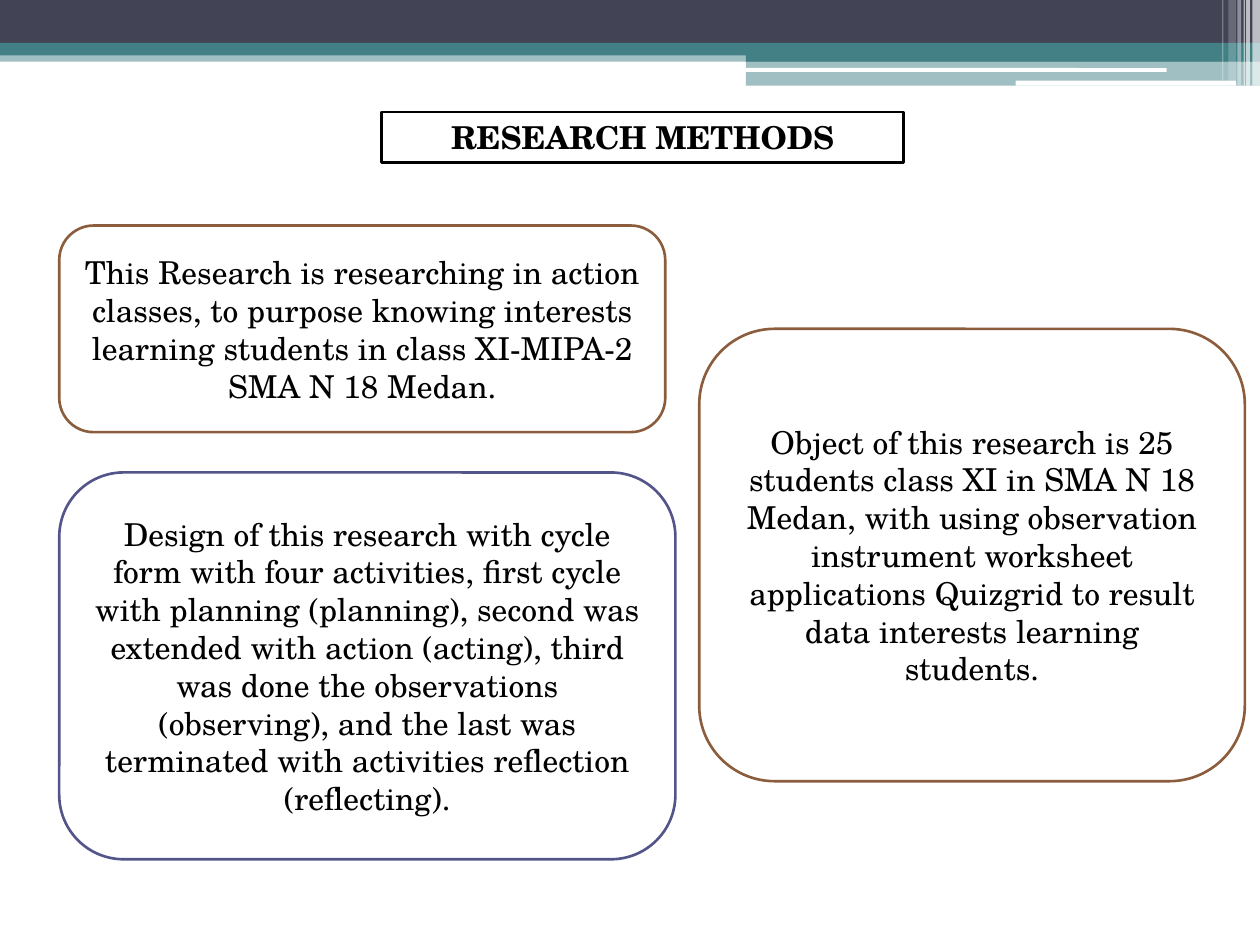
import pptx
import pptx.util
import pptx.dml.color
import pptx.enum.shapes
import pptx.enum.text
import pptx.oxml

FONT = "TeX Gyre Schola"
COLORS = {"white": "FFFFFF", "black": "000000", "navy": "424456",
          "teal": "438086", "brown": "8B5D3D", "violet": "53548A"}
RECT = pptx.enum.shapes.MSO_SHAPE.RECTANGLE
ROUND = pptx.enum.shapes.MSO_SHAPE.ROUNDED_RECTANGLE

prs = pptx.Presentation()
prs.slide_width = pptx.util.Inches(10)
prs.slide_height = pptx.util.Inches(7.5)
COL = prs.slide_width / 100
ROW = prs.slide_height / 75
s = prs.slides.add_slide(prs.slide_layouts[5])


def add_box(kind, left, top, width, height, fill, opacity=100):
    """Add a filled shape without outline, placed in grid columns and rows."""
    sp = s.shapes.add_shape(kind, int(left * COL), int(top * ROW),
                            int(width * COL), int(height * ROW))
    sp.shadow.inherit = False
    sp.line.fill.background()
    sp.fill.solid()
    sp.fill.fore_color.rgb = pptx.dml.color.RGBColor.from_string(COLORS[fill])
    if opacity < 100:
        color = sp.fill._xPr.find(".//" + pptx.oxml.ns.qn("a:srgbClr"))
        alpha = color.makeelement(pptx.oxml.ns.qn("a:alpha"), {"val": str(opacity * 1000)})
        color.append(alpha)
    return sp


def write_framed(sp, text, line, bold=False):
    """Outline a shape and give it one centred paragraph."""
    sp.line.color.rgb = pptx.dml.color.RGBColor.from_string(COLORS[line])
    sp.line.width = pptx.util.Pt(1.5)
    tf = sp.text_frame
    tf.text = text
    tf.word_wrap = True
    tf.auto_size = pptx.enum.text.MSO_AUTO_SIZE.NONE
    tf.vertical_anchor = pptx.enum.text.MSO_ANCHOR.MIDDLE
    p = tf.paragraphs[0]
    p.alignment = pptx.enum.text.PP_ALIGN.CENTER
    p.font.name = FONT
    p.font.size = pptx.util.Pt(18)
    p.font.bold = bold
    p.font.color.rgb = pptx.dml.color.RGBColor.from_string(COLORS["black"])


# Header bands: left, top, width, height, colour, opacity
for band in [(0, 4, 100, 0.9, "teal", 50),
             (0, 0, 100, 3.4, "navy", 100),
             (0, 3.4, 100, 1, "teal", 100),
             (59.2, 3.9, 40.8, 1, "teal", 100),
             (59.2, 4.8, 40.8, 2, "teal", 50)]:
    add_box(RECT, *band)

# White rules cut into the stepped band
add_box(ROUND, 59.1, 5.4, 33.5, 0.3, "white")
add_box(ROUND, 80.6, 6.4, 17.5, 0.4, "white")

# Translucent stripes in the corner: left, width, height, opacity
for left, width, height, opacity in [(99.4, 0.6, 6.8, 65), (98.9, 0.3, 6.8, 65),
                                     (98.7, 0.1, 6.8, 60), (98.2, 0.3, 6.8, 40),
                                     (97.5, 0.6, 6.4, 20), (97, 0.1, 6.4, 30)]:
    add_box(RECT, left, 0, width, height, "white", opacity)

title = s.shapes.title
title.left, title.top = int(30.3 * COL), int(8.9 * ROW)
title.width, title.height = int(41.4 * COL), int(4 * ROW)
title.fill.solid()
title.fill.fore_color.rgb = pptx.dml.color.RGBColor.from_string(COLORS["white"])
write_framed(title, "RESEARCH METHODS", "black", bold=True)

# Text cards: position in the grid, outline colour, wording
cards = [
    ((4.7, 17.9, 48.1, 16.4), "brown",
     "This Research is researching in action classes, to purpose knowing interests "
     "learning students in class XI-MIPA-2 SMA N 18 Medan."),
    ((4.7, 37.5, 48.9, 30.7), "violet",
     "Design of this research with cycle form with four activities, first cycle with "
     "planning (planning), second was extended with action (acting), third was done the "
     "observations (observing), and the last was terminated with activities reflection "
     "(reflecting)."),
    ((55.5, 26.1, 43.3, 35.9), "brown",
     "Object of this research is 25 students class XI in SMA N 18 Medan, with using "
     "observation instrument worksheet applications Quizgrid to result data interests "
     "learning students."),
]
for place, line, text in cards:
    write_framed(add_box(ROUND, *place, "white"), text, line)

prs.save("out.pptx")
